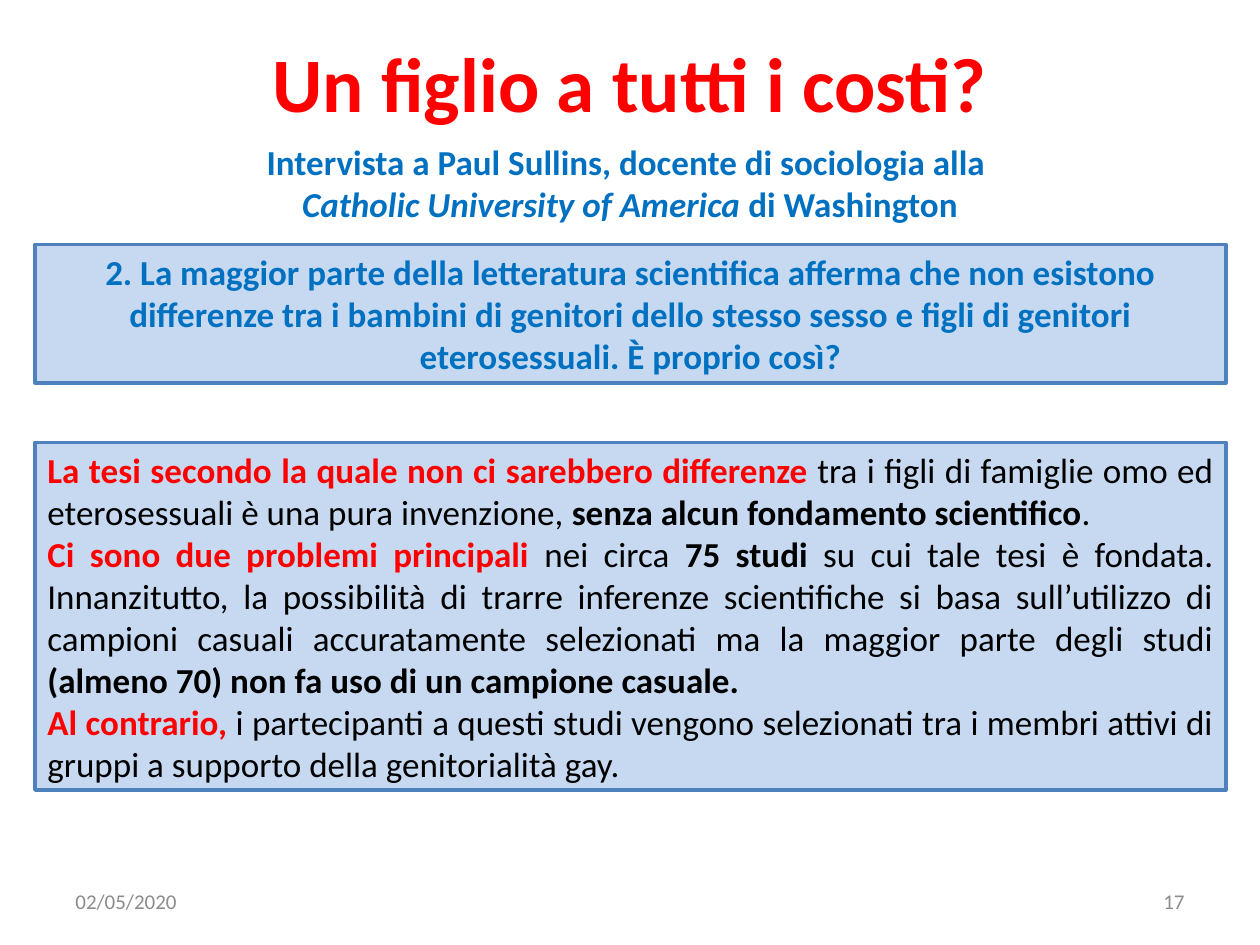
from dataclasses import dataclass

from pptx import Presentation
from pptx.dml.color import RGBColor
from pptx.enum.shapes import MSO_SHAPE
from pptx.enum.text import MSO_ANCHOR, MSO_AUTO_SIZE, PP_ALIGN
from pptx.util import Pt


@dataclass(frozen=True)
class Theme:
    font: str = "Calibri"
    red: str = "FF0000"
    blue: str = "0070C0"
    black: str = "000000"
    grey: str = "8C8C8C"
    panel: str = "C6D9F1"
    border: str = "4F81BD"
    title_size: int = 44
    text_size: int = 20
    footer_size: int = 12


theme = Theme()


def write(sp, paragraphs, size, align, anchor=MSO_ANCHOR.TOP):
    """Fill a shape with paragraphs of (text, colour, style) runs; style holds b and/or i."""
    tf = sp.text_frame
    tf.word_wrap = True
    tf.auto_size = MSO_AUTO_SIZE.NONE
    tf.vertical_anchor = anchor
    for i, runs in enumerate(paragraphs):
        p = tf.add_paragraph() if i else tf.paragraphs[0]
        p.alignment = align
        for text, color, style in runs:
            r = p.add_run()
            r.text = text
            r.font.name = theme.font
            r.font.size = Pt(size)
            r.font.bold = "b" in style
            r.font.italic = "i" in style
            r.font.color.rgb = RGBColor.from_string(color)


def place(sp, left, top, width, height):
    sp.left, sp.top, sp.width, sp.height = Pt(left), Pt(top), Pt(width), Pt(height)


prs = Presentation()
prs.slide_width, prs.slide_height = Pt(720), Pt(540)
s = prs.slides.add_slide(prs.slide_layouts[0])

# Title
title = s.shapes.title
place(title, 76.5, 21, 567, 51)
write(title, [[("Un figlio a tutti i costi?", theme.red, "b")]],
      theme.title_size, PP_ALIGN.CENTER, MSO_ANCHOR.MIDDLE)

# Interviewee
interviewee = s.shapes.add_textbox(Pt(0), Pt(77), Pt(720), Pt(55.5))
write(interviewee, [
    [("Intervista a Paul Sullins, docente di sociologia alla ", theme.blue, "b")],
    [("Catholic University of America", theme.blue, "bi"),
     (" di Washington", theme.blue, "b")],
], theme.text_size, PP_ALIGN.CENTER)

# Question and answer panels
question = s.placeholders[1]
place(question, 20, 139.75, 680.5, 79)
answer = s.shapes.add_shape(MSO_SHAPE.RECTANGLE, Pt(20), Pt(252.75), Pt(680.5), Pt(198.75))
answer.shadow.inherit = False
for panel in (question, answer):
    panel.fill.solid()
    panel.fill.fore_color.rgb = RGBColor.from_string(theme.panel)
    panel.line.color.rgb = RGBColor.from_string(theme.border)
    panel.line.width = Pt(2)

write(question, [[
    ("2. La maggior parte della letteratura scientifica afferma che non esistono "
     "differenze tra i bambini di genitori dello stesso sesso e figli di genitori "
     "eterosessuali. È proprio così?", theme.blue, "b"),
]], theme.text_size, PP_ALIGN.CENTER)

write(answer, [
    [("La tesi secondo la quale non ci sarebbero differenze ", theme.red, "b"),
     ("tra i figli di famiglie omo ed eterosessuali è una pura invenzione, ", theme.black, ""),
     ("senza alcun fondamento scientifico", theme.black, "b"),
     (". ", theme.black, "")],
    [("Ci sono due problemi principali ", theme.red, "b"),
     ("nei circa ", theme.black, ""),
     ("75 studi ", theme.black, "b"),
     ("su cui tale tesi è fondata. Innanzitutto, la possibilità di trarre inferenze "
      "scientifiche si basa sull’utilizzo di campioni casuali accuratamente selezionati "
      "ma la maggior parte degli studi ", theme.black, ""),
     ("(almeno 70) non fa uso di un campione casuale. ", theme.black, "b")],
    [("Al contrario, ", theme.red, "b"),
     ("i partecipanti a questi studi vengono selezionati tra i membri attivi di gruppi "
      "a supporto della genitorialità gay.", theme.black, "")],
], theme.text_size, PP_ALIGN.JUSTIFY)

# Date and page number
for text, left, align in (("02/05/2020", 36, PP_ALIGN.LEFT), ("17", 516, PP_ALIGN.RIGHT)):
    footer = s.shapes.add_textbox(Pt(left), Pt(500.5), Pt(168), Pt(28.75))
    write(footer, [[(text, theme.grey, "")]], theme.footer_size, align, MSO_ANCHOR.MIDDLE)

prs.save("out.pptx")
